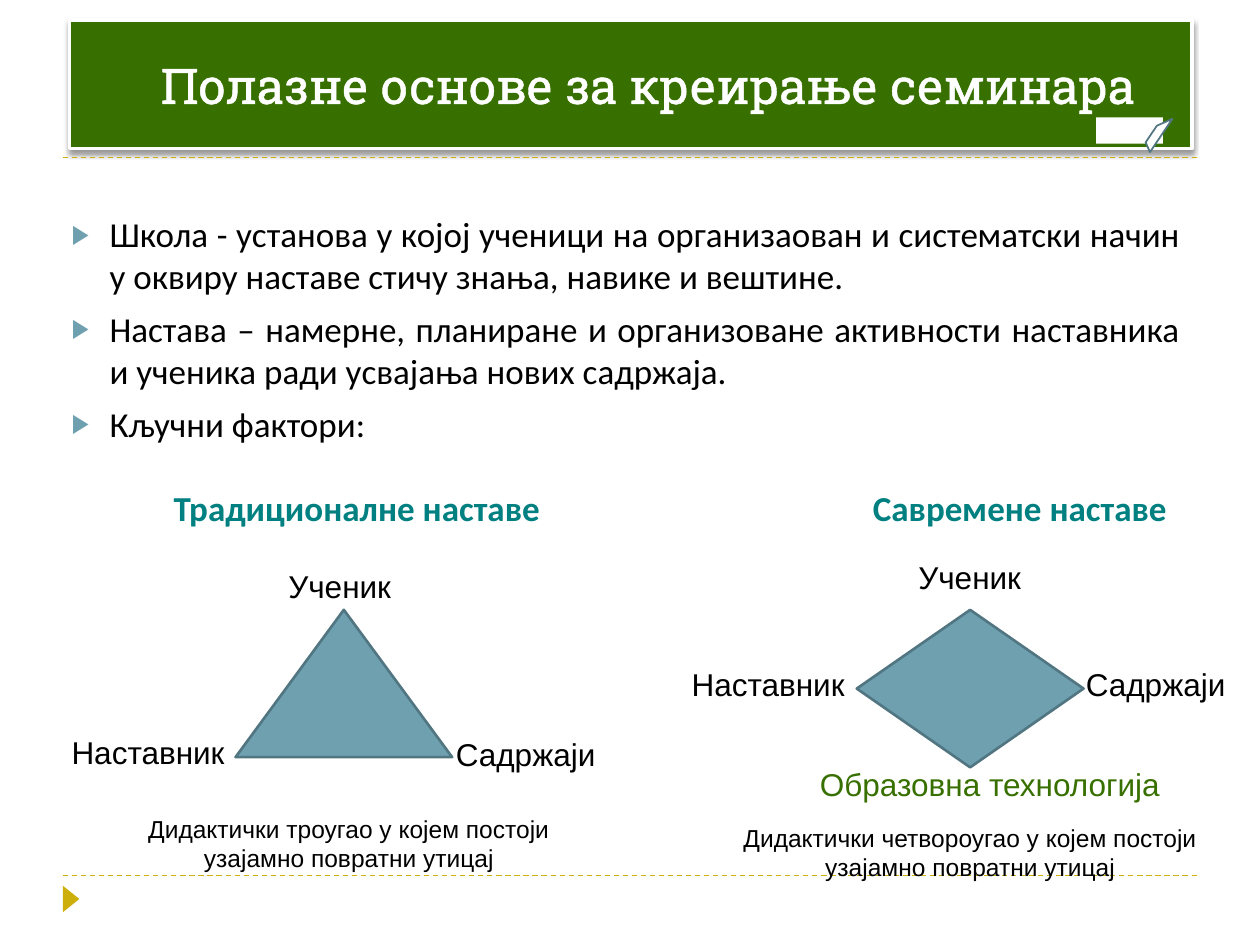
"""Build the slide on the starting points for creating a seminar."""
from dataclasses import dataclass

from lxml import etree
from pptx import Presentation
from pptx import util as u
from pptx.dml.color import RGBColor
from pptx.enum import dml, shapes, text
from pptx.oxml.ns import qn

COLORS = {
    "green": "387000", "gold": "CCAF0A", "blue": "6EA0B0", "edge": "517682",
    "teal": "008080", "white": "FFFFFF", "black": "000000",
}
KINDS = shapes.MSO_SHAPE


@dataclass
class Label:
    """Hold a text box: its lines, place and look."""
    lines: list[str]
    left: float
    top: float
    width: float
    height: float = 29
    size: int = 18
    color: str = "black"
    centered: bool = False
    font: str = "Arial"
    bold: bool = False


@dataclass
class Figure:
    """Hold a preset shape with its place and look."""
    kind: KINDS
    left: float
    top: float
    width: float
    height: float
    fill: str
    line: str | None = None
    weight: float = 1
    rotation: float = 0
    flipped: bool = False


BULLETS = [
    "Школа - установа у којој ученици на организаован и систематски начин "
    "у оквиру наставе стичу знања, навике и вештине.",
    "Настава – намерне, планиране и организоване активности наставника "
    "и ученика ради усвајања нових садржаја.",
    "Кључни фактори:",
]
RULES = [500.4, 90]
FIGURES = [
    Figure(KINDS.ISOSCELES_TRIANGLE, 33.1, 509, 15.1, 9.4, "gold", rotation=90),
    Figure(KINDS.RECTANGLE, 626.4, 67, 38.2, 15.1, "white"),
    Figure(KINDS.DIAGONAL_STRIPE, 657.4, 67.7, 12.2, 19.4, "white", "edge", 1, 246.2, True),
    Figure(KINDS.ISOSCELES_TRIANGLE, 134.6, 348.5, 123.8, 84.2, "blue", "edge", 1.5),
    Figure(KINDS.DIAMOND, 489.6, 348.5, 129.6, 90, "blue", "edge", 1.5),
]
LABELS = [
    Label(["Традиционалне наставе"], 92.2, 274.5, 235, 31.6, 20, "teal",
          font="Calibri", bold=True),
    Label(["Савремене наставе"], 491.7, 274.5, 195, 31.6, 20, "teal",
          font="Calibri", bold=True),
    Label(["Ученик"], 157.7, 320.4, 78.5),
    Label(["Наставник"], 33.8, 415.4, 106.6),
    Label(["Садржаји"], 253.4, 416.2, 106.6),
    Label(["Дидактички троугао у којем постоји", "узајамно повратни утицај"],
          44.6, 461.5, 309.6, 41, 14, centered=True),
    Label(["Ученик"], 517.7, 315.4, 78.5),
    Label(["Наставник"], 388.1, 376.6, 106.6),
    Label(["Садржаји"], 613.4, 376.6, 106.6),
    Label(["Образовна технологија"], 461.5, 433.4, 225.4, color="green"),
    Label(["Дидактички четвороугао у којем постоји", "узајамно повратни утицај"],
          399.6, 466.6, 309.6, 41, 14, centered=True),
]


def rgb(name: str) -> RGBColor:
    """Return the named colour."""
    return RGBColor.from_string(COLORS[name])


def place(shape, left: float, top: float, width: float, height: float) -> None:
    """Move and size a shape in points."""
    shape.left, shape.top = u.Pt(left), u.Pt(top)
    shape.width, shape.height = u.Pt(width), u.Pt(height)


def set_font(para, name: str, size: float, color: str, bold: bool = False) -> None:
    """Format the font of a whole paragraph."""
    para.font.name, para.font.size, para.font.bold = name, u.Pt(size), bold
    para.font.color.rgb = rgb(color)


def add_node(parent, tag: str, **attributes: str):
    """Append a DrawingML element to a parent."""
    return etree.SubElement(parent, qn(f"a:{tag}"), attributes)


def format_title(box) -> None:
    """Fill the title placeholder and turn it into a banner."""
    place(box, 39.6, 11.5, 641.5, 73.4)
    box.fill.solid()
    box.fill.fore_color.rgb = rgb("green")
    box.line.color.rgb = rgb("white")
    box.line.width = u.Pt(2)
    effects = add_node(box._element.spPr, "effectLst")
    shadow = add_node(effects, "outerShdw", blurRad=str(u.Pt(3)), dist=str(u.Pt(2)),
                      dir="5400000", algn="ctr", rotWithShape="0")
    add_node(add_node(shadow, "srgbClr", val=COLORS["black"]), "alpha", val="40000")
    frame = box.text_frame
    frame.text = "Полазне основе за креирање семинара"
    frame.auto_size = text.MSO_AUTO_SIZE.NONE
    frame.vertical_anchor = text.MSO_ANCHOR.MIDDLE
    frame.margin_left = u.Pt(27)
    para = frame.paragraphs[0]
    para.alignment = text.PP_ALIGN.CENTER
    set_font(para, "Roboto Slab", 28, "white")
    outline = add_node(para.runs[0]._r.get_or_add_rPr(), "ln", w=str(u.Pt(1.45)))
    add_node(add_node(outline, "solidFill"), "srgbClr", val=COLORS["white"])


def format_body(box) -> None:
    """Fill the body placeholder with the bullets."""
    place(box, 33.8, 118.1, 648, 150)
    frame = box.text_frame
    frame.text = "\n".join(BULLETS)
    frame.auto_size = text.MSO_AUTO_SIZE.NONE
    frame.vertical_anchor = text.MSO_ANCHOR.TOP
    for para in frame.paragraphs:
        para.alignment = text.PP_ALIGN.JUSTIFY
        para.space_before = u.Pt(6)
        props = para._p.get_or_add_pPr()
        props.set("marL", str(u.Pt(21.6)))
        props.set("indent", str(u.Pt(-21.6)))
        add_node(add_node(props, "buClr"), "srgbClr", val=COLORS["blue"])
        add_node(props, "buSzPct", val="76000")
        add_node(props, "buFont", typeface="Arial")
        add_node(props, "buChar", char="▶")
        set_font(para, "Calibri", 20, "black")


def add_rule(page, top: float) -> None:
    """Draw a dashed rule across the page."""
    rule = page.shapes.add_connector(
        shapes.MSO_CONNECTOR.STRAIGHT, u.Pt(36), u.Pt(top), u.Pt(684), u.Pt(top))
    rule.line.color.rgb = rgb("gold")
    rule.line.width = u.Pt(0.75)
    rule.line.dash_style = dml.MSO_LINE.DASH
    add_node(rule._element.spPr, "effectLst")


def add_figure(page, figure: Figure) -> None:
    """Draw a preset shape."""
    shape = page.shapes.add_shape(figure.kind, 0, 0, 0, 0)
    place(shape, figure.left, figure.top, figure.width, figure.height)
    shape.rotation = figure.rotation
    shape.shadow.inherit = False
    shape.fill.solid()
    shape.fill.fore_color.rgb = rgb(figure.fill)
    if figure.line:
        shape.line.color.rgb = rgb(figure.line)
        shape.line.width = u.Pt(figure.weight)
    else:
        shape.line.fill.background()
    if figure.flipped:
        shape._element.spPr.find(qn("a:xfrm")).set("flipH", "1")


def add_label(page, label: Label) -> None:
    """Write a text box."""
    box = page.shapes.add_textbox(0, 0, 0, 0)
    place(box, label.left, label.top, label.width, label.height)
    frame = box.text_frame
    frame.word_wrap = True
    frame.auto_size = text.MSO_AUTO_SIZE.SHAPE_TO_FIT_TEXT
    frame.text = "\n".join(label.lines)
    for para in frame.paragraphs:
        para.alignment = text.PP_ALIGN.CENTER if label.centered else text.PP_ALIGN.LEFT
        set_font(para, label.font, label.size, label.color, label.bold)


def main() -> None:
    """Build and save the deck."""
    deck = Presentation()
    deck.slide_width, deck.slide_height = u.Pt(720), u.Pt(540)
    page = deck.slides.add_slide(deck.slide_layouts[1])
    format_title(page.shapes.title)
    format_body(page.placeholders[1])
    for top in RULES:
        add_rule(page, top)
    for figure in FIGURES:
        add_figure(page, figure)
    for label in LABELS:
        add_label(page, label)
    deck.save("out.pptx")


if __name__ == "__main__":
    main()
